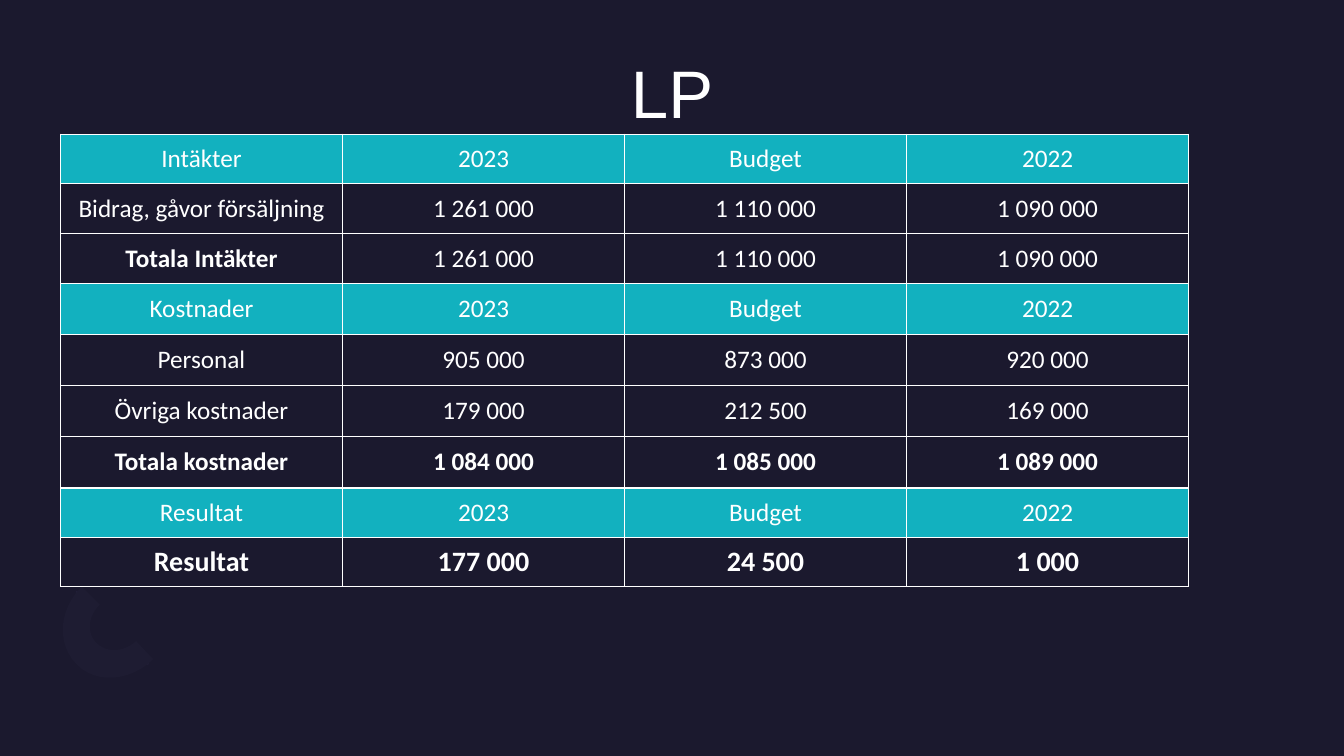
from lxml import etree
from pptx import Presentation
from pptx.dml.color import RGBColor
from pptx.enum.shapes import MSO_SHAPE
from pptx.enum.text import MSO_ANCHOR, PP_ALIGN
from pptx.oxml import parse_xml
from pptx.oxml.ns import nsdecls
from pptx.util import Inches, Pt

NAVY = RGBColor(0x1B, 0x19, 0x2E)
TEAL = RGBColor(0x12, 0xB1, 0xBF)
WHITE = RGBColor(0xFF, 0xFF, 0xFF)
PURPLE = RGBColor(0x2C, 0x28, 0x4A)
FAINT_PURPLE = RGBColor(0x1E, 0x1C, 0x32)
OVAL = MSO_SHAPE.OVAL
CENTER = PP_ALIGN.CENTER
TOP, MIDDLE = MSO_ANCHOR.TOP, MSO_ANCHOR.MIDDLE

TABLE_LEFT, TABLE_TOP, TABLE_WIDTH = 4.5, 17.73, 83.95
YEARS = ("2023", "Budget", "2022")
SECTIONS = [
    ("Intäkter", 6.58, [
        (("Bidrag, gåvor försäljning", "1 261 000", "1 110 000", "1 090 000"), 0, 18),
        (("Totala Intäkter", "1 261 000", "1 110 000", "1 090 000"), 1, 18),
    ]),
    ("Kostnader", 6.77, [
        (("Personal", "905 000", "873 000", "920 000"), 0, 18),
        (("Övriga kostnader", "179 000", "212 500", "169 000"), 0, 18),
        (("Totala kostnader", "1 084 000", "1 085 000", "1 089 000"), 4, 18),
    ]),
    ("Resultat", 6.53, [
        (("Resultat", "177 000", "24 500", "1 000"), 4, 20),
    ]),
]
OUTER_CURVES = [
    ((9.75, 90.13), (7.13, 90.53), (5.7, 87.87)),
    ((4.2, 85.2), (4.35, 80.67), (6.08, 77.6)),
]
INNER_CURVES = [
    ((6.53, 81.47), (6.45, 83.87), (7.2, 85.07)),
    ((7.95, 86.4), (9.23, 86.27), (10.13, 84.8)),
]


def curve_points(start, curves, steps=12):
    points = [start]
    for first, second, end in curves:
        begin = points[-1]
        for step in range(1, steps + 1):
            t = step / steps
            weights = ((1 - t) ** 3, 3 * t * (1 - t) ** 2, 3 * t * t * (1 - t), t ** 3)
            corners = (begin, first, second, end)
            points.append(tuple(
                sum(weight * corner[axis] for weight, corner in zip(weights, corners))
                for axis in (0, 1)))
    return points


class SlideBuilder:
    """Draws styled elements on a slide divided into 100 columns and 100 rows."""

    def __init__(self, presentation):
        self.column = presentation.slide_width / 100
        self.row = presentation.slide_height / 100
        self.slide = presentation.slides.add_slide(presentation.slide_layouts[6])
        self.slide.background.fill.solid()
        self.slide.background.fill.fore_color.rgb = NAVY

    def box(self, left, top, width, height):
        return (round(left * self.column), round(top * self.row),
                round(width * self.column), round(height * self.row))

    def style_text(self, paragraph, font_name, size, bold=False):
        paragraph.alignment = CENTER
        paragraph.font.name = font_name
        paragraph.font.size = Pt(size)
        paragraph.font.bold = bold
        paragraph.font.color.rgb = WHITE

    def paint(self, shape, color):
        shape.shadow.inherit = False
        shape.fill.solid()
        shape.fill.fore_color.rgb = color
        shape.line.fill.background()

    def ellipse(self, left, top, width, height, rotation):
        shape = self.slide.shapes.add_shape(OVAL, *self.box(left, top, width, height))
        shape.rotation = rotation
        self.paint(shape, PURPLE)

    def outline(self, points, color):
        corners = [self.box(x, y, 0, 0)[:2] for x, y in points]
        builder = self.slide.shapes.build_freeform(*corners[0])
        builder.add_line_segments(corners[1:], close=True)
        self.paint(builder.convert_to_shape(), color)

    def title(self, text, left, top, width, height):
        shape = self.slide.shapes.add_textbox(*self.box(left, top, width, height))
        frame = shape.text_frame
        frame.word_wrap = True
        frame.vertical_anchor = TOP
        frame.margin_left = frame.margin_right = frame.margin_top = frame.margin_bottom = 0
        paragraph = frame.paragraphs[0]
        paragraph.text = text
        paragraph.line_spacing = 0.9
        self.style_text(paragraph, "Arial", 48)

    def cell(self, cell, text, size, bold, header):
        cell.text = text
        cell.vertical_anchor = MIDDLE
        self.style_text(cell.text_frame.paragraphs[0], "Calibri", size, bold)
        properties = cell._tc.get_or_add_tcPr()
        for side in ("lnL", "lnR", "lnT", "lnB"):
            border = parse_xml(f'<a:{side} {nsdecls("a")} w="{Pt(0.75)}"/>')
            fill = etree.SubElement(border, "{%s}solidFill" % border.nsmap["a"])
            etree.SubElement(fill, "{%s}srgbClr" % border.nsmap["a"], val=str(WHITE))
            properties.append(border)
        if header:
            cell.fill.solid()
            cell.fill.fore_color.rgb = TEAL
        else:
            cell.fill.background()

    def table(self, heading, entries, left, top, width, row_height):
        rows = [((heading, *YEARS), 0, 18), *entries]
        height = row_height * len(rows)
        table = self.slide.shapes.add_table(
            len(rows), len(YEARS) + 1, *self.box(left, top, width, height)).table
        table.first_row = table.horz_banding = False
        for row_index, (values, bold_count, size) in enumerate(rows):
            for column_index, text in enumerate(values):
                self.cell(table.cell(row_index, column_index), text, size,
                          column_index < bold_count, row_index == 0)
        return top + height


def main():
    presentation = Presentation()
    presentation.slide_width = Inches(13.33)
    presentation.slide_height = Inches(7.5)
    builder = SlideBuilder(presentation)
    for left, top in ((10.13, 84.93), (6.15, 77.73)):
        builder.ellipse(left, top, 0.45, 3.47, 135)
    arc = curve_points((11.4, 87.2), OUTER_CURVES) + curve_points((7.43, 80), INNER_CURVES)
    builder.outline(arc, FAINT_PURPLE)
    builder.title("LP", 4.5, 8, 91, 19.47)
    top = TABLE_TOP
    for heading, row_height, entries in SECTIONS:
        top = builder.table(heading, entries, TABLE_LEFT, top, TABLE_WIDTH, row_height)
    presentation.save("out.pptx")


if __name__ == "__main__":
    main()
